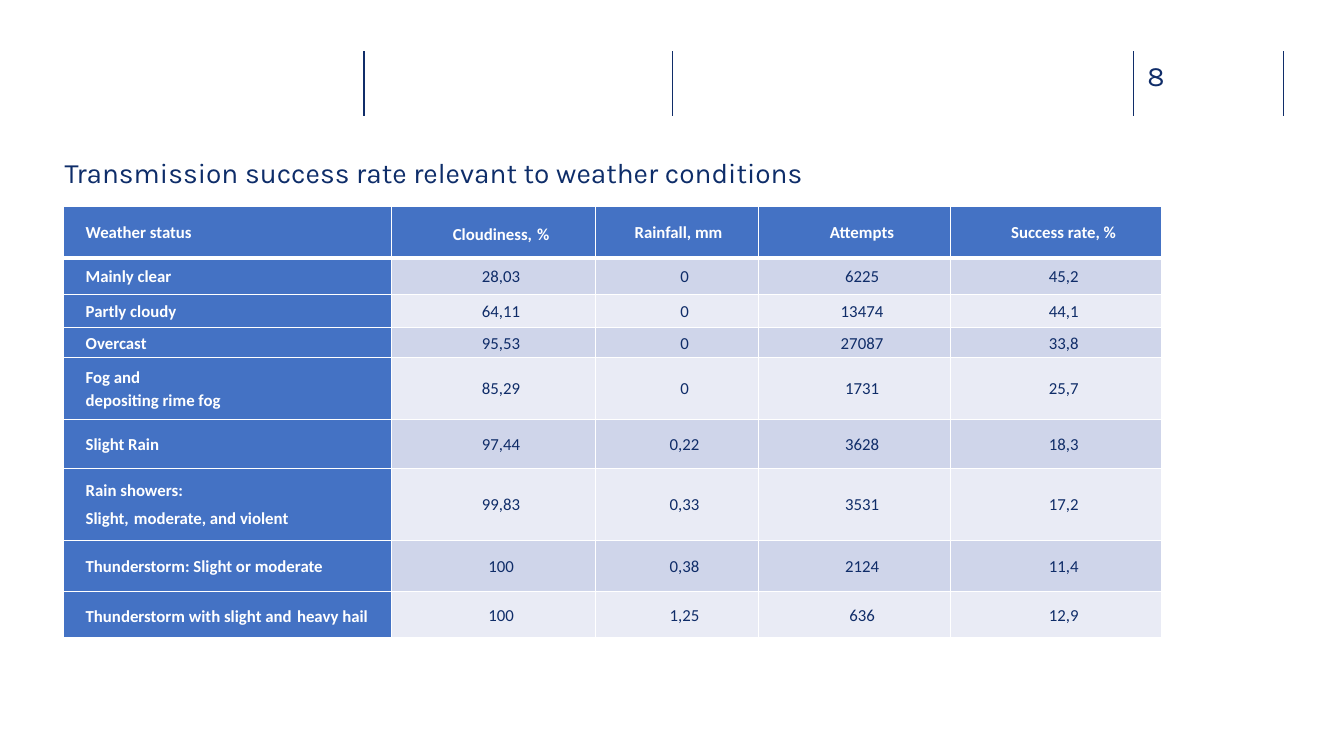
from lxml.etree import SubElement
from pptx import Presentation
from pptx.dml.color import RGBColor
from pptx.enum.shapes import MSO_CONNECTOR
from pptx.enum.text import MSO_ANCHOR, PP_ALIGN
from pptx.oxml.ns import qn
from pptx.util import Inches, Pt

# Content: "|" parts the runs of a label, a run of one space is set larger
PAGE_NUMBER = "8"
TITLE = "Transmission success rate relevant to weather conditions"
WEATHER = [
    ("Weather status", "Cloudiness,| |%", "Rainfall, mm", "Attempts", "Success rate, %"),
    ("Mainly clear", "28,03", "0", "6225", "45,2"),
    ("Partly cloudy", "64,11", "0", "13474", "44,1"),
    ("Overcast", "95,53", "0", "27087", "33,8"),
    ("Fog and\ndepositing rime fog", "85,29", "0", "1731", "25,7"),
    ("Slight Rain", "97,44", "0,22", "3628", "18,3"),
    ("Rain showers:\nSlight,| |moderate, and violent", "99,83", "0,33", "3531", "17,2"),
    ("Thunderstorm: Slight or moderate", "100", "0,38", "2124", "11,4"),
    ("Thunderstorm with slight and| |heavy hail", "100", "1,25", "636", "12,9"),
]

# Layout, in inches
COLUMN_WIDTHS = [3.25, 2.03, 1.61, 1.91, 2.09]
ROW_HEIGHTS = [0.51, 0.36, 0.33, 0.3, 0.61, 0.49, 0.71, 0.51, 0.46]
RULE_XS = [3.61, 6.67, 11.24, 12.73]
RULE_TOP, RULE_BOTTOM = 0.51, 1.15
INDENT = (0, 0.14)
RAINFALL_INDENT = (0.13, -0.11)

# Colours
NAVY = RGBColor(0x10, 0x2D, 0x69)
TITLE_NAVY = RGBColor(0x0E, 0x2D, 0x69)
FIGURE_NAVY = RGBColor(0x0F, 0x2C, 0x68)
WHITE = RGBColor(0xFF, 0xFF, 0xFF)
HEADER_BLUE = RGBColor(0x44, 0x72, 0xC4)
BANDS = [RGBColor(0xE9, 0xEB, 0xF5), RGBColor(0xCF, 0xD5, 0xEA)]

CELL_FORMAT = {
    "vertical_anchor": MSO_ANCHOR.MIDDLE,
    "margin_left": Inches(0.08), "margin_right": Inches(0.07),
    "margin_top": 0, "margin_bottom": 0,
}
FRAME_FORMAT = {
    "word_wrap": True, "margin_left": 0, "margin_right": 0,
    "margin_top": 0, "margin_bottom": 0,
}


def apply(target, values):
    for name, value in values.items():
        setattr(target, name, value)


def add_heading(slide, text, box, color, line_spacing):
    frame = slide.shapes.add_textbox(*map(Inches, box)).text_frame
    apply(frame, FRAME_FORMAT)
    paragraph = frame.paragraphs[0]
    paragraph.line_spacing = line_spacing
    run = paragraph.add_run()
    run.text = text
    apply(run.font, {"name": "Karla", "size": Pt(20)})
    run.font.color.rgb = color


def add_rule(slide, x):
    rule = slide.shapes.add_connector(
        MSO_CONNECTOR.STRAIGHT, *map(Inches, (x, RULE_TOP, x, RULE_BOTTOM)))
    rule.line.color.rgb = NAVY
    rule.line.width = Pt(1)
    SubElement(rule._element.spPr, qn("a:effectLst"))


def set_borders(cell, widths):
    properties = cell._tc.get_or_add_tcPr()
    for side, width in widths.items():
        border = SubElement(properties, qn(f"a:ln{side}"), w=str(Pt(width)))
        fill = SubElement(border, qn("a:solidFill"))
        SubElement(fill, qn("a:srgbClr"), val=str(WHITE))


def fill_cell(cell, text, row, column):
    heading = row == 0 or column == 0
    apply(cell, CELL_FORMAT)
    set_borders(cell, {"L": 1, "R": 1, "T": 3 if row == 1 else 1, "B": 3 if row == 0 else 1})
    cell.fill.solid()
    cell.fill.fore_color.rgb = HEADER_BLUE if heading else BANDS[row % 2]
    margin, indent = RAINFALL_INDENT if (row, column) == (0, 2) else INDENT
    cell.text_frame.text = "\n" * text.count("\n")
    for paragraph, line in zip(cell.text_frame.paragraphs, text.split("\n")):
        apply(paragraph, {
            "alignment": PP_ALIGN.CENTER if column else PP_ALIGN.LEFT,
            "line_spacing": 0.92 if (row, column) == (8, 0) else 1.07,
            "space_after": Pt(0.2),
        })
        properties = paragraph._p.get_or_add_pPr()
        properties.set("marL", str(Inches(margin)))
        properties.set("indent", str(Inches(indent)))
        for piece in line.split("|"):
            run = paragraph.add_run()
            run.text = piece
            apply(run.font, {"name": "Calibri", "bold": heading,
                             "size": Pt(16 if piece == " " else 12)})
            run.font.color.rgb = WHITE if heading else FIGURE_NAVY


def add_weather_table(slide):
    table = slide.shapes.add_table(
        len(ROW_HEIGHTS), len(COLUMN_WIDTHS), Inches(0.63), Inches(2.05),
        Inches(sum(COLUMN_WIDTHS)), Inches(sum(ROW_HEIGHTS))).table
    for column, width in zip(table.columns, COLUMN_WIDTHS):
        column.width = Inches(width)
    for row, height in zip(table.rows, ROW_HEIGHTS):
        row.height = Inches(height)
    for row, texts in enumerate(WEATHER):
        for column, text in enumerate(texts):
            fill_cell(table.cell(row, column), text, row, column)


def main():
    deck = Presentation()
    deck.slide_width, deck.slide_height = Inches(13.33), Inches(7.5)
    slide = deck.slides.add_slide(deck.slide_layouts[6])

    # Top rules and page number
    for x in RULE_XS:
        add_rule(slide, x)
    add_heading(slide, PAGE_NUMBER, (11.38, 0.58, 0.73, 0.34), NAVY, 1.0)

    # Title and table
    add_heading(slide, TITLE, (0.64, 1.58, 12.09, 0.34), TITLE_NAVY, 0.9)
    add_weather_table(slide)
    deck.save("out.pptx")


if __name__ == "__main__":
    main()
